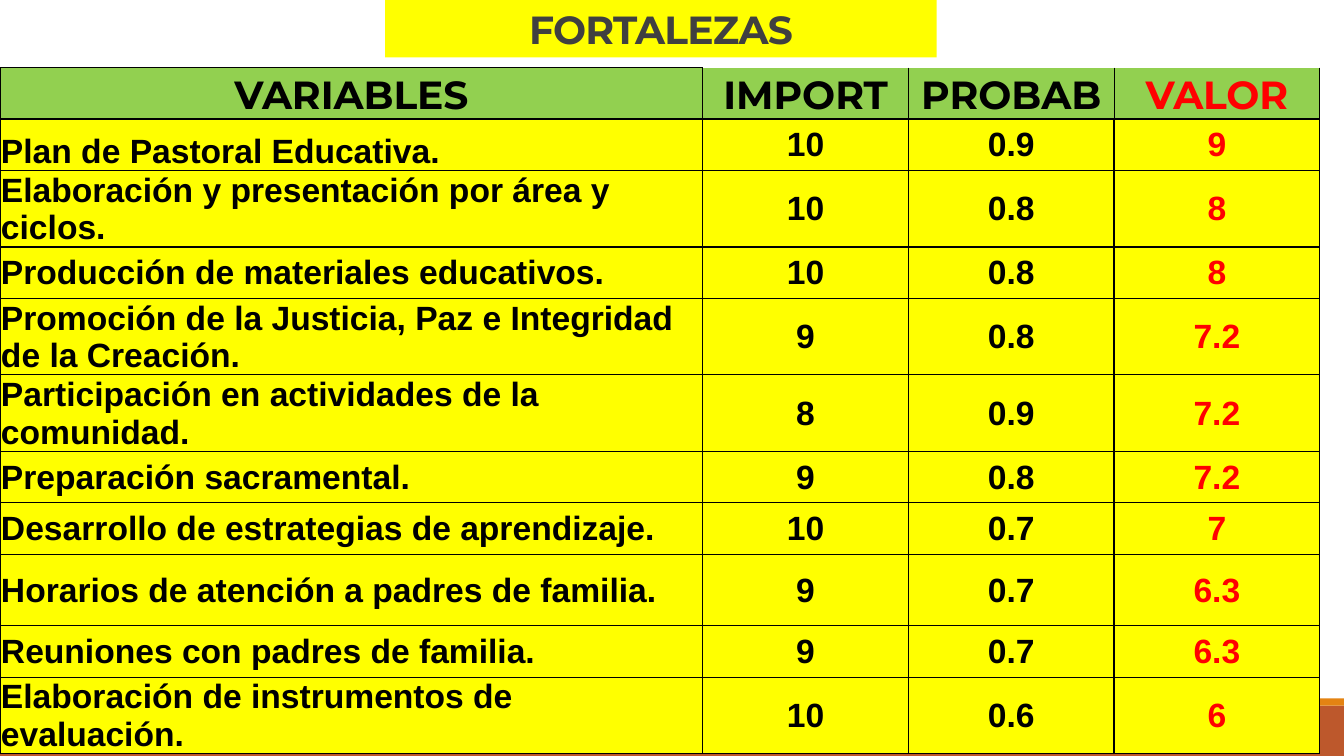
from dataclasses import dataclass

from lxml.etree import SubElement
from pptx import Presentation
from pptx.dml.color import RGBColor
from pptx.enum.shapes import MSO_SHAPE
from pptx.enum.text import MSO_ANCHOR, MSO_AUTO_SIZE, PP_ALIGN
from pptx.oxml.ns import qn
from pptx.slide import Slide
from pptx.table import _Cell
from pptx.text.text import _Paragraph
from pptx.util import Inches, Pt

COLORS = {
    "black": "000000", "grey": "404040", "red": "FF0000", "yellow": "FFFF00",
    "green": "92D050", "orange": "E48312", "brown": "BD582C",
}
HEADERS = ("VARIABLES", "IMPORT", "PROBAB", "VALOR")
COLUMN_WIDTHS = (6.97, 2.04, 2.04, 2.04)
HEADER_HEIGHT = 0.51
CELL_MARGINS = {
    "margin_left": Inches(0.01), "margin_top": Inches(0.01),
    "margin_right": Inches(0.01), "margin_bottom": 0,
}


@dataclass
class Bar:
    top: float
    height: float
    color: str


@dataclass
class Strength:
    variable: str
    importance: str
    probability: str
    value: str
    height: float = 0.51
    anchor: MSO_ANCHOR = MSO_ANCHOR.MIDDLE
    alignment: PP_ALIGN = PP_ALIGN.LEFT


BARS = (Bar(7, 0.5, "brown"), Bar(6.93, 0.07, "orange"))
STRENGTHS = (
    Strength("Plan de Pastoral Educativa.", "10", "0.9", "9", anchor=MSO_ANCHOR.BOTTOM),
    Strength("Elaboración y presentación por área y ciclos.", "10", "0.8", "8", 0.76),
    Strength("Producción de materiales educativos.", "10", "0.8", "8"),
    Strength("Promoción de la Justicia, Paz e Integridad de la Creación.",
             "9", "0.8", "7.2", 0.76, MSO_ANCHOR.BOTTOM),
    Strength("Participación en actividades de la comunidad.", "8", "0.9", "7.2", 0.76),
    Strength("Preparación sacramental.", "9", "0.8", "7.2"),
    Strength("Desarrollo de estrategias de aprendizaje.", "10", "0.7", "7"),
    Strength("Horarios de atención a padres de familia.", "9", "0.7", "6.3", 0.71,
             alignment=PP_ALIGN.JUSTIFY),
    Strength("Reuniones con padres de familia.", "9", "0.7", "6.3",
             alignment=PP_ALIGN.JUSTIFY),
    Strength("Elaboración de instrumentos de evaluación.", "10", "0.6", "6", 0.76),
)


def rgb(color: str) -> RGBColor:
    return RGBColor.from_string(COLORS[color])


def apply_format(target: object, values: dict) -> None:
    for name, value in values.items():
        setattr(target, name, value)


def write_text(paragraph: _Paragraph, text: str, font_name: str, size: float,
               color: str, alignment: PP_ALIGN) -> None:
    paragraph.alignment = alignment
    run = paragraph.add_run()
    run.text = text
    apply_format(run.font, {"name": font_name, "size": Pt(size), "bold": True})
    run.font.color.rgb = rgb(color)


def set_borders(cell: _Cell, widths: dict[str, float]) -> None:
    properties = cell._tc.get_or_add_tcPr()
    for side in ("L", "R", "T", "B"):
        width = widths[side]
        line = SubElement(properties, qn(f"a:ln{side}"), w=str(Pt(width)))
        if width:
            fill = SubElement(line, qn("a:solidFill"))
            SubElement(fill, qn("a:srgbClr"), val=COLORS["black"])
        else:
            SubElement(line, qn("a:noFill"))


def format_cell(cell: _Cell, fill: str, anchor: MSO_ANCHOR, borders: dict[str, float]) -> None:
    apply_format(cell, {**CELL_MARGINS, "vertical_anchor": anchor})
    set_borders(cell, borders)
    cell.fill.solid()
    cell.fill.fore_color.rgb = rgb(fill)


def add_bar(slide: Slide, bar: Bar) -> None:
    shape = slide.shapes.add_shape(MSO_SHAPE.RECTANGLE, 0, Inches(bar.top),
                                   Inches(13.33), Inches(bar.height))
    shape.shadow.inherit = False
    shape.fill.solid()
    shape.fill.fore_color.rgb = rgb(bar.color)
    shape.line.fill.background()


def add_title(slide: Slide) -> None:
    title = slide.shapes.title
    apply_format(title, {"left": Inches(3.82), "top": 0,
                         "width": Inches(5.47), "height": Inches(0.57)})
    title.fill.solid()
    title.fill.fore_color.rgb = rgb("yellow")
    apply_format(title.text_frame, {"vertical_anchor": MSO_ANCHOR.BOTTOM,
                                    "auto_size": MSO_AUTO_SIZE.NONE, "word_wrap": True})
    paragraph = title.text_frame.paragraphs[0]
    write_text(paragraph, "FORTALEZAS", "Montserrat", 28, "grey", PP_ALIGN.CENTER)
    paragraph.line_spacing = 0.85
    paragraph.runs[0].font._element.set("spc", "-50")


def add_strengths_table(slide: Slide) -> None:
    heights = [HEADER_HEIGHT] + [strength.height for strength in STRENGTHS]
    table = slide.shapes.add_table(
        len(heights), len(HEADERS), 0, Inches(0.67),
        Inches(sum(COLUMN_WIDTHS)), Inches(sum(heights))).table
    apply_format(table, {"first_row": False, "horz_banding": False})
    for column, width in zip(table.columns, COLUMN_WIDTHS):
        column.width = Inches(width)
    for row, height in zip(table.rows, heights):
        row.height = Inches(height)

    # Header row: only the first cell has a top border
    for index, header in enumerate(HEADERS):
        cell = table.cell(0, index)
        format_cell(cell, "green", MSO_ANCHOR.BOTTOM,
                    {"L": 0.5, "R": 0.5, "T": 0 if index else 0.5, "B": 1})
        write_text(cell.text_frame.paragraphs[0], header, "Montserrat", 28,
                   "red" if header == "VALOR" else "black", PP_ALIGN.CENTER)

    # One row per strength, with its value in red
    for row_index, strength in enumerate(STRENGTHS, start=1):
        texts = (strength.variable, strength.importance, strength.probability, strength.value)
        for index, text in enumerate(texts):
            cell = table.cell(row_index, index)
            format_cell(cell, "yellow", MSO_ANCHOR.MIDDLE if index else strength.anchor,
                        dict.fromkeys("LRTB", 1))
            write_text(cell.text_frame.paragraphs[0], text, "Arial", 24,
                       "red" if HEADERS[index] == "VALOR" else "black",
                       PP_ALIGN.CENTER if index else strength.alignment)


def main() -> None:
    presentation = Presentation()
    apply_format(presentation, {"slide_width": Inches(13.33), "slide_height": Inches(7.5)})
    slide = presentation.slides.add_slide(presentation.slide_layouts[5])

    # Footer bars, title and table
    for bar in BARS:
        add_bar(slide, bar)
    add_title(slide)
    add_strengths_table(slide)
    presentation.save("out.pptx")


if __name__ == "__main__":
    main()
